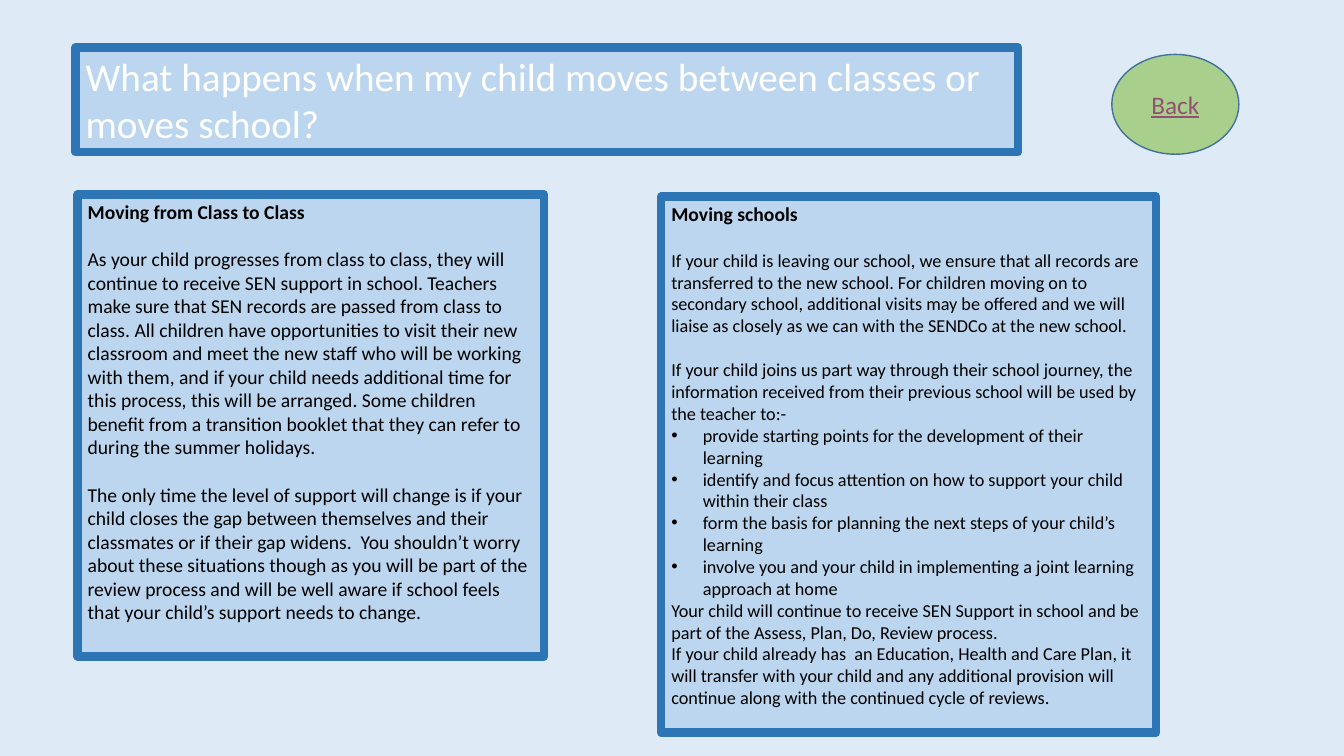
from lxml import etree
from pptx import Presentation
from pptx import util as u
from pptx.dml.color import RGBColor
from pptx.enum import shapes, text
from pptx.oxml import ns

PANEL, BORDER = "BBD6EE", "2E75B5"
BULLET_INDENT = 22.5

CLASS_MOVES = [
    ("Moving from Class to Class", dict(bold=True)),
    ("As your child progresses from class to class, they will continue to receive SEN support in school. "
     "Teachers make sure that SEN records are passed from class to class. All children have opportunities "
     "to visit their new classroom and meet the new staff who will be working with them, and if your child "
     "needs additional time for this process, this will be arranged. Some children benefit from a transition "
     "booklet that they can refer to during the summer holidays.", dict(before=17)),
    ("The only time the level of support will change is if your child closes the gap between themselves and "
     "their classmates or if their gap widens.  You shouldn’t worry about these situations though as you will "
     "be part of the review process and will be well aware if school feels that your child’s support needs "
     "to change.", dict(before=17)),
]

SCHOOL_MOVES = [
    ("Moving schools", dict(size=14, bold=True)),
    ("If your child is leaving our school, we ensure that all records are transferred to the new school. "
     "For children moving on to secondary school, additional visits may be offered and we will liaise as "
     "closely as we can with the SENDCo at the new school.", dict(before=17)),
    ("If your child joins us part way through their school journey, the information received from their "
     "previous school will be used by the teacher to:-", dict(before=15.8)),
    ("provide starting points for the development of their learning", dict(bullet=True)),
    ("identify and focus attention on how to support your child within their class", dict(bullet=True)),
    ("form the basis for planning the next steps of your child’s learning", dict(bullet=True)),
    ("involve you and your child in implementing a joint learning approach at home", dict(bullet=True)),
    ("Your child will continue to receive SEN Support in school and be part of the Assess, Plan, Do, "
     "Review process.", {}),
    ("If your child already has  an Education, Health and Care Plan, it will transfer with your child and "
     "any additional provision will continue along with the continued cycle of reviews.", {}),
]


def colour(value):
    return RGBColor.from_string(value)


def paint(fill, value):
    fill.solid()
    fill.fore_color.rgb = colour(value)


def write(paragraph, words, size=14, color="000000", bold=False, underline=False,
          align=text.PP_ALIGN.LEFT, before=0):
    paragraph.alignment = align
    paragraph.space_before = u.Pt(before)
    paragraph.space_after = u.Pt(0)
    paragraph.line_spacing = 1.0
    run = paragraph.add_run()
    run.text = words
    run.font.name = "Calibri"
    run.font.size = u.Pt(size)
    run.font.bold = bold
    run.font.underline = underline
    run.font.color.rgb = colour(color)


def set_bullet(paragraph, shown):
    indent = BULLET_INDENT if shown else 0
    properties = paragraph._p.get_or_add_pPr()
    properties.set("marL", str(u.Pt(indent)))
    properties.set("indent", str(u.Pt(-indent)))
    if shown:
        etree.SubElement(properties, ns.qn("a:buFont"), typeface="Arial")
        etree.SubElement(properties, ns.qn("a:buChar"), char="•")
    else:
        etree.SubElement(properties, ns.qn("a:buNone"))


def frame(shape, left, top, width, height, fill=PANEL, line=BORDER, weight=6,
          anchor=text.MSO_ANCHOR.TOP):
    shape.left, shape.top = u.Pt(left), u.Pt(top)
    shape.width, shape.height = u.Pt(width), u.Pt(height)
    paint(shape.fill, fill)
    paint(shape.line.fill, line)
    shape.line.width = u.Pt(weight)
    content = shape.text_frame
    content.word_wrap = True
    content.auto_size = text.MSO_AUTO_SIZE.NONE
    content.vertical_anchor = anchor
    content.margin_left = content.margin_right = u.Pt(7.2)
    content.margin_top = content.margin_bottom = u.Pt(3.6)
    return content


def add_panel(placeholder, box, passages, size):
    content = frame(placeholder, *box)
    for index, (words, style) in enumerate(passages):
        paragraph = content.add_paragraph() if index else content.paragraphs[0]
        style = {"size": size, **style}
        bullet = style.pop("bullet", False)
        write(paragraph, words, **style)
        set_bullet(paragraph, bullet)


def add_title(slide, words):
    content = frame(slide.shapes.title, 54, 33.8, 673.2, 75)
    write(content.paragraphs[0], words, size=28, color="FFFFFF")


def add_back_button(slide):
    button = slide.shapes.add_shape(shapes.MSO_SHAPE.OVAL, 0, 0, 0, 0)
    button.shadow.inherit = False
    content = frame(button, 794.2, 38.9, 90.7, 71.3, fill="A8D08C", line="42719B",
                    weight=1, anchor=text.MSO_ANCHOR.MIDDLE)
    write(content.paragraphs[0], "Back", size=18, color="954F72", underline=True,
          align=text.PP_ALIGN.CENTER)


def main():
    deck = Presentation()
    deck.slide_width, deck.slide_height = u.Pt(960), u.Pt(540)
    slide = deck.slides.add_slide(deck.slide_layouts.get_by_name("Two Content"))
    paint(slide.background.fill, "DEEBF7")
    add_title(slide, "What happens when my child moves between classes or moves school?")
    add_back_button(slide)
    add_panel(slide.placeholders[1], (55.4, 139, 333.4, 329.8), CLASS_MOVES, 14)
    add_panel(slide.placeholders[2], (472.3, 140.4, 353.5, 383), SCHOOL_MOVES, 13)
    deck.save("out.pptx")


if __name__ == "__main__":
    main()
